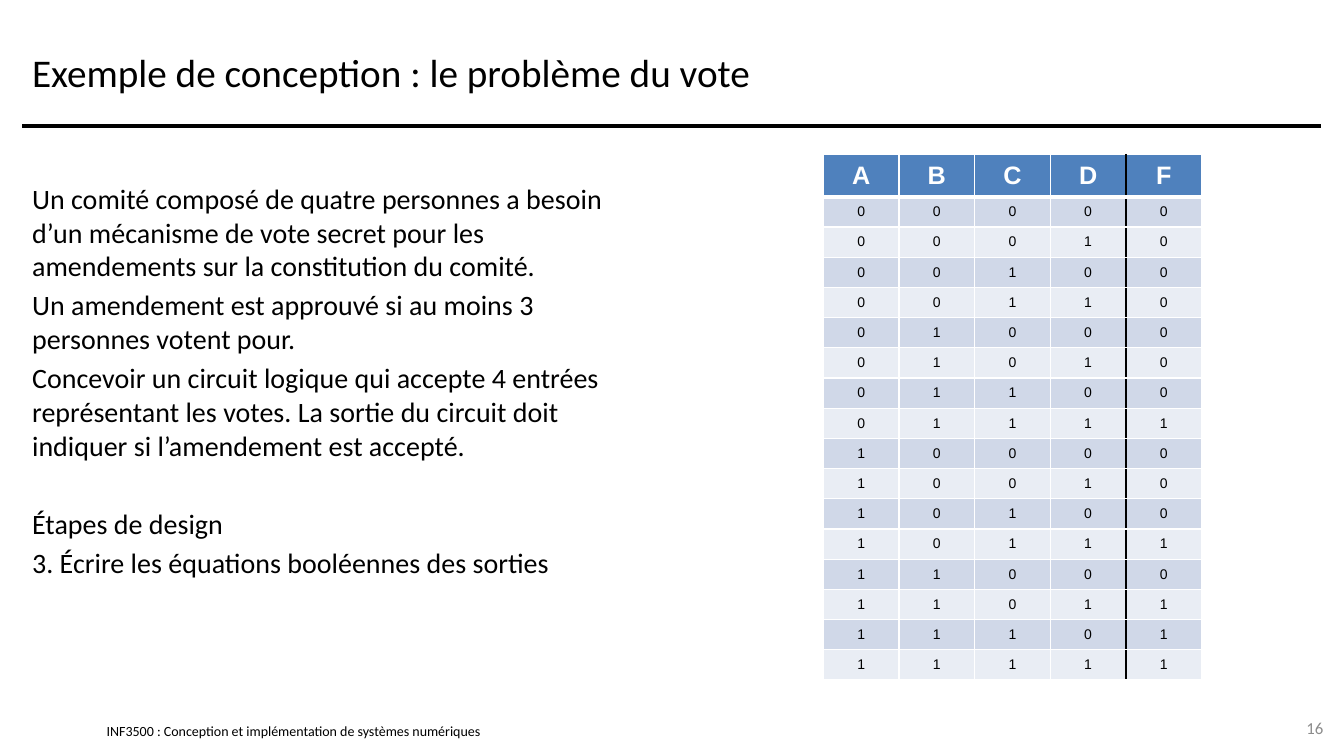
from itertools import product

from lxml.etree import SubElement
from pptx import Presentation
from pptx.dml.color import RGBColor
from pptx.enum.shapes import MSO_CONNECTOR
from pptx.enum.text import MSO_ANCHOR, PP_ALIGN
from pptx.oxml.ns import qn
from pptx.util import Cm, Pt


def rgb(value):
    return RGBColor.from_string(value)


class VoteSlide:
    BLACK, WHITE, GREY = "000000", "FFFFFF", "8C8C8C"
    HEADER, BANDS = "4F81BD", ("D0D8E8", "E9EDF4")
    TEXT_FONT, TABLE_FONT = "Calibri", "Arial"

    def __init__(self, prs):
        self.s = prs.slides.add_slide(prs.slide_layouts[6])

    def style(self, p, size, color, font, bold=False):
        for r in p.runs:
            r.font.name, r.font.size, r.font.bold = font, Pt(size), bold
            r.font.color.rgb = rgb(color)

    def text(self, box, paragraphs, size, color=BLACK, anchor=MSO_ANCHOR.MIDDLE,
             align=PP_ALIGN.LEFT, inset=True):
        """Each paragraph is a pair: wording, space before in points."""
        tf = self.s.shapes.add_textbox(*map(Cm, box)).text_frame
        tf.word_wrap, tf.vertical_anchor = True, anchor
        if not inset:
            tf.margin_left = tf.margin_right = tf.margin_top = tf.margin_bottom = 0
        tf.text = "\n".join(wording for wording, _ in paragraphs)
        for p, (_, before) in zip(tf.paragraphs, paragraphs):
            p.alignment, p.space_before = align, Pt(before)
            self.style(p, size, color, self.TEXT_FONT)

    def rule(self, x1, x2, y, width):
        line = self.s.shapes.add_connector(
            MSO_CONNECTOR.STRAIGHT, Cm(x1), Cm(y), Cm(x2), Cm(y))
        line.line.color.rgb, line.line.width = rgb(self.BLACK), Pt(width)
        SubElement(line._element.spPr, qn("a:effectLst"))

    def border(self, cell, side, color, width):
        ln = SubElement(cell._tc.get_or_add_tcPr(), qn(f"a:ln{side}"), w=str(Pt(width)))
        fill = SubElement(ln, qn("a:solidFill"))
        SubElement(fill, qn("a:srgbClr"), val=color)

    def truth_table(self, box, header_height, rows):
        n_rows, n_cols = len(rows), len(rows[0])
        table = self.s.shapes.add_table(n_rows, n_cols, *map(Cm, box)).table
        row_height = (box[3] - header_height) / (n_rows - 1)
        for i, values in enumerate(rows):
            table.rows[i].height = Cm(row_height if i else header_height)
            for j, value in enumerate(values):
                cell = table.cell(i, j)
                # A black line separates the inputs from the output
                left = self.BLACK if j == n_cols - 1 else self.WHITE
                right = self.BLACK if j == n_cols - 2 else self.WHITE
                self.border(cell, "L", left, 1)
                self.border(cell, "R", right, 1)
                self.border(cell, "T", self.WHITE, 3 if i == 1 else 1)
                self.border(cell, "B", self.WHITE, 1 if i else 3)
                cell.fill.solid()
                cell.fill.fore_color.rgb = rgb(self.BANDS[(i - 1) % 2] if i else self.HEADER)
                cell.vertical_anchor = MSO_ANCHOR.MIDDLE
                p = cell.text_frame.paragraphs[0]
                p.text, p.alignment = str(value), PP_ALIGN.CENTER
                if i:
                    self.style(p, 10, self.BLACK, self.TABLE_FONT)
                else:
                    self.style(p, 18, self.WHITE, self.TABLE_FONT, bold=True)


def main():
    prs = Presentation()
    prs.slide_width, prs.slide_height = Cm(33.87), Cm(19.05)
    slide = VoteSlide(prs)

    # Footer and heading rule
    slide.text((2.69, 18.21, 12.98, 0.43),
               [("INF3500 : Conception et implémentation de systèmes numériques", 0)],
               10, inset=False)
    slide.rule(0.56, 33.3, 3.18, 3)

    # Title
    slide.text((0.56, 0.43, 32.74, 2.74),
               [("Exemple de conception : le problème du vote", 0)], 28)

    # Problem statement and design step
    slide.text((0.56, 4.45, 16.08, 12.9), [
        ("Un comité composé de quatre personnes a besoin d’un mécanisme de vote "
         "secret pour les amendements sur la constitution du comité.", 0),
        ("Un amendement est approuvé si au moins 3 personnes votent pour.", 4),
        ("Concevoir un circuit logique qui accepte 4 entrées représentant les votes. "
         "La sortie du circuit doit indiquer si l’amendement est accepté.", 4),
        ("Étapes de design", 32),
        ("3. Écrire les équations booléennes des sorties", 4),
    ], 20, anchor=MSO_ANCHOR.TOP)

    # Slide number
    slide.text((31.9, 17.83, 1.7, 1.02), [("16", 0)], 12, VoteSlide.GREY,
               align=PP_ALIGN.RIGHT)

    # Truth table: F is 1 when at least three members vote for
    votes = [(*v, int(sum(v) >= 3)) for v in product((0, 1), repeat=4)]
    slide.truth_table((20.75, 3.89, 9.53, 13.26), 1.07, ["ABCDF", *votes])

    prs.save("out.pptx")


if __name__ == "__main__":
    main()
